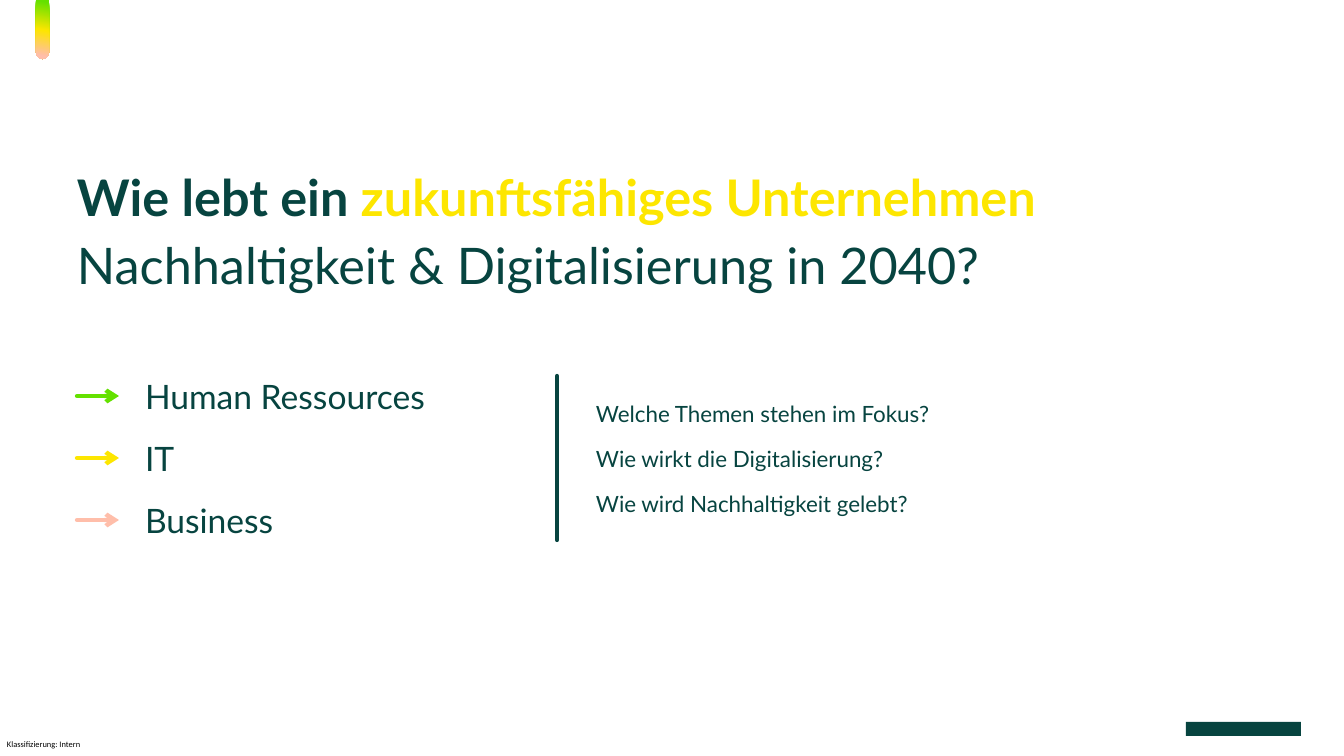
from copy import deepcopy

from lxml.etree import SubElement
from pptx import Presentation
from pptx.dml.color import RGBColor
from pptx.enum.shapes import MSO_CONNECTOR as Connector, MSO_SHAPE as Shape
from pptx.enum.text import MSO_ANCHOR as Anchor, MSO_AUTO_SIZE as AutoSize
from pptx.oxml.ns import qn
from pptx.util import Emu, Pt

PETROL = RGBColor(0x07, 0x44, 0x40)
GREEN = RGBColor(0x64, 0xE1, 0x00)
YELLOW = RGBColor(0xFD, 0xE6, 0x00)
PEACH = RGBColor(0xFF, 0xBE, 0xAA)
BLACK = RGBColor(0, 0, 0)
ACCENTS = (GREEN, YELLOW, PEACH)

EMU_PER_PX = 914400 / 100.8


def px(length):
    return Emu(round(length * EMU_PER_PX))


def accent_gradient(fill, positions, angle):
    """Blend the three accent colours; angle is counter-clockwise."""
    fill.gradient()
    fill.gradient_angle = angle
    last = fill.gradient_stops[-1]._gs
    last.addnext(deepcopy(last))
    for stop, position, color in zip(fill.gradient_stops, positions, ACCENTS):
        stop.position = position
        stop.color.rgb = color


class SlideBuilder:
    font = "Lato"
    line_width = Pt(3)

    def __init__(self, slide):
        self.shapes = slide.shapes

    def text(self, left, top, width, height, runs, size, color=PETROL,
             font=font, anchor=Anchor.TOP):
        """Each run is (wording, bold, gradient positions or None)."""
        box = self.shapes.add_textbox(px(left), px(top), px(width), px(height))
        frame = box.text_frame
        frame.word_wrap = True
        frame.auto_size = AutoSize.SHAPE_TO_FIT_TEXT
        frame.vertical_anchor = anchor
        frame.margin_left = frame.margin_right = 0
        frame.margin_top = frame.margin_bottom = 0
        for wording, bold, positions in runs:
            run = frame.paragraphs[0].add_run()
            run.text = wording
            run.font.name = font
            run.font.size = Pt(size)
            run.font.bold = bold
            if positions:
                accent_gradient(run.font.fill, positions, 0)
            else:
                run.font.color.rgb = color

    def shape(self, kind, left, top, width, height):
        shape = self.shapes.add_shape(kind, px(left), px(top), px(width), px(height))
        shape.shadow.inherit = False
        shape.line.fill.background()
        return shape

    def line(self, x1, y1, x2, y2, color, arrow=False):
        line = self.shapes.add_connector(
            Connector.STRAIGHT, px(x1), px(y1), px(x2), px(y2))
        line.line.color.rgb = color
        line.line.width = self.line_width
        properties = line._element.spPr
        stroke = properties.find(qn("a:ln"))
        stroke.set("cap", "rnd")
        SubElement(stroke, qn("a:round"))
        if arrow:
            SubElement(stroke, qn("a:tailEnd"), type="arrow")
        SubElement(properties, qn("a:effectLst"))


def main():
    deck = Presentation()
    deck.slide_width, deck.slide_height = px(1344), px(756)
    page = SlideBuilder(deck.slides.add_slide(deck.slide_layouts[6]))

    # Page frame: accent tab, plain brand mark, classification
    tab = page.shape(Shape.ROUND_2_SAME_RECTANGLE, 36, 0, 13, 59)
    tab.adjustments[0] = 0.5
    tab.rotation = 180
    accent_gradient(tab.fill, (0.04, 0.51, 0.93), 80)
    brand_mark = page.shape(Shape.RECTANGLE, 1186, 722, 115, 14)
    brand_mark.fill.solid()
    brand_mark.fill.fore_color.rgb = PETROL
    page.text(7, 739, 76, 10, [("Klassifizierung: Intern", False, None)], 6,
              color=BLACK, font="Calibri")

    # Headline
    page.text(77, 166, 1190, 61,
              [("Wie lebt ein ", True, None),
               ("zukunftsfähiges Unternehmen", True, (0.35, 0.5, 0.85))], 36)
    page.text(77, 234, 999, 61,
              [("Nachhaltigkeit & Digitalisierung in 2040?", False, None)], 36)

    # Topics with arrows
    topics = ("Human Ressources", "IT", "Business")
    for row, (topic, color) in enumerate(zip(topics, ACCENTS)):
        middle = 396 + 62 * row
        page.line(77, middle, 119, middle, color, arrow=True)
        page.text(145, middle - 20, 323, 40, [(topic, False, None)], 24,
                  anchor=Anchor.MIDDLE)

    # Divider and questions
    page.line(557, 376, 557, 540, PETROL)
    questions = ("Welche Themen stehen im Fokus?",
                 "Wie wirkt die Digitalisierung?",
                 "Wie wird Nachhaltigkeit gelebt?")
    for row, question in enumerate(questions):
        page.text(596, 400 + 45 * row, 480, 27, [(question, False, None)], 16,
                  anchor=Anchor.MIDDLE)

    deck.save("out.pptx")


if __name__ == "__main__":
    main()
